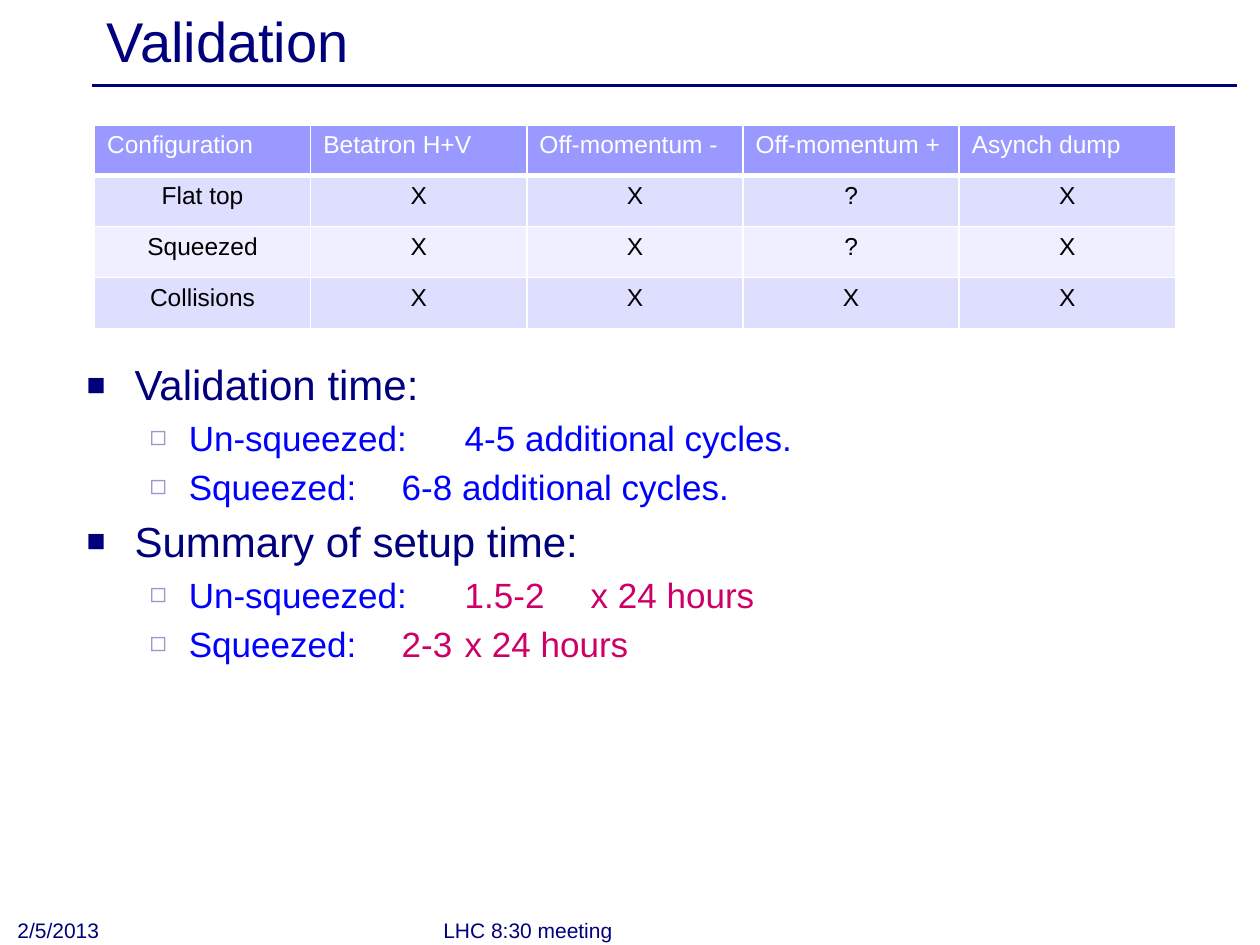
from lxml import etree
from pptx import Presentation, util as u
from pptx.dml.color import RGBColor
from pptx.enum import shapes, text
from pptx.oxml.ns import qn

NAVY = RGBColor(0x00, 0x00, 0x7D)
BLUE = RGBColor(0x00, 0x00, 0xFF)
MAGENTA = RGBColor(0xCC, 0x00, 0x66)
LAVENDER = RGBColor(0x99, 0x99, 0xCC)
HEADER = RGBColor(0x99, 0x99, 0xFF)
BAND_DARK = RGBColor(0xDE, 0xDE, 0xFF)
BAND_LIGHT = RGBColor(0xEF, 0xEF, 0xFF)
WHITE = RGBColor(0xFF, 0xFF, 0xFF)
BLACK = RGBColor(0x00, 0x00, 0x00)


def add_run(paragraph, words, size, color):
    run = paragraph.add_run()
    run.text = words
    run.font.name = "Arial"
    run.font.size = u.Pt(size)
    run.font.color.rgb = color


def add_frame(left, top, width, height, anchor):
    box = slide.shapes.add_textbox(u.Inches(left), u.Inches(top), u.Inches(width), u.Inches(height))
    box.text_frame.word_wrap = True
    box.text_frame.vertical_anchor = anchor
    return box.text_frame


prs = Presentation()
prs.slide_width, prs.slide_height = u.Inches(10), u.Inches(7.5)
slide = prs.slides.add_slide(prs.slide_layouts[6])

# Rule under the title
rule = slide.shapes.add_connector(
    shapes.MSO_CONNECTOR.STRAIGHT, u.Inches(0.73), u.Inches(0.68), u.Inches(9.82), u.Inches(0.68))
rule.line.color.rgb = NAVY
rule.line.width = u.Pt(2)
etree.SubElement(rule._element.spPr, qn("a:effectLst"))

# Title, footer and date
for words, size, place, anchor in [
    ("Validation", 32, (0.75, 0.03, 9, 0.57), text.MSO_ANCHOR.MIDDLE),
    ("LHC 8:30 meeting", 12, (3.42, 7.25, 3.17, 0.28), text.MSO_ANCHOR.BOTTOM),
    ("2/5/2013", 12, (0.04, 7.24, 2.33, 0.29), text.MSO_ANCHOR.BOTTOM),
]:
    add_run(add_frame(*place, anchor).paragraphs[0], words, size, NAVY)

# Bulleted times: level and coloured runs
times = [
    (0, [("Validation time:", NAVY)]),
    (1, [("Un-squeezed: \t4-5 additional cycles.", BLUE)]),
    (1, [("Squeezed: \t6-8 additional cycles.", BLUE)]),
    (0, [("Summary of setup time:", NAVY)]),
    (1, [("Un-squeezed: \t", BLUE), ("1.5-2 \tx 24 hours", MAGENTA)]),
    (1, [("Squeezed:\t", BLUE), ("2-3 \tx 24 hours", MAGENTA)]),
]
# Per level: text size, left margin, hanging indent, bullet, its colour and percent size
levels = [(24, 0.38, 0.38, "■", NAVY, 75), (20, 0.81, 0.31, "◻", LAVENDER, 80)]
body = add_frame(0.59, 2.8, 9, 3.23, text.MSO_ANCHOR.TOP)
for i, (level, runs) in enumerate(times):
    size, margin, hang, bullet, bullet_color, bullet_size = levels[level]
    paragraph = body.paragraphs[0] if i == 0 else body.add_paragraph()
    paragraph.level = level
    props = paragraph._p.get_or_add_pPr()
    props.set("marL", str(u.Inches(margin)))
    props.set("indent", str(-u.Inches(hang)))
    spacing = etree.SubElement(props, qn("a:spcBef"))
    etree.SubElement(spacing, qn("a:spcPct"), val="20000")
    tint = etree.SubElement(props, qn("a:buClr"))
    etree.SubElement(tint, qn("a:srgbClr"), val=str(bullet_color))
    etree.SubElement(props, qn("a:buSzPct"), val=str(bullet_size * 1000))
    etree.SubElement(props, qn("a:buFont"), typeface="Arial")
    etree.SubElement(props, qn("a:buChar"), char=bullet)
    for words, color in runs:
        add_run(paragraph, words, size, color)

# Validation table
validation = [
    ["Configuration", "Betatron H+V", "Off-momentum -", "Off-momentum +", "Asynch dump"],
    ["Flat top", "X", "X", "?", "X"],
    ["Squeezed", "X", "X", "?", "X"],
    ["Collisions", "X", "X", "X", "X"],
]
row_fills = [HEADER, BAND_DARK, BAND_LIGHT, BAND_DARK]
grid = slide.shapes.add_table(
    4, 5, u.Inches(0.75), u.Inches(0.99), u.Inches(8.58), u.Inches(1.62)).table
for r, row in enumerate(validation):
    for c, words in enumerate(row):
        cell = grid.cell(r, c)
        paragraph = cell.text_frame.paragraphs[0]
        if r > 0:
            paragraph.alignment = text.PP_ALIGN.CENTER
        add_run(paragraph, words, 14, BLACK if r else WHITE)
        # White borders, heavier between header and body
        cell_props = cell._tc.get_or_add_tcPr()
        for side in "LRTB":
            heavy = (r, side) in [(0, "B"), (1, "T")]
            border = etree.SubElement(cell_props, qn("a:ln" + side), w=str(u.Pt(3 if heavy else 1)))
            paint = etree.SubElement(border, qn("a:solidFill"))
            etree.SubElement(paint, qn("a:srgbClr"), val=str(WHITE))
        cell.fill.solid()
        cell.fill.fore_color.rgb = row_fills[r]

prs.save("out.pptx")
